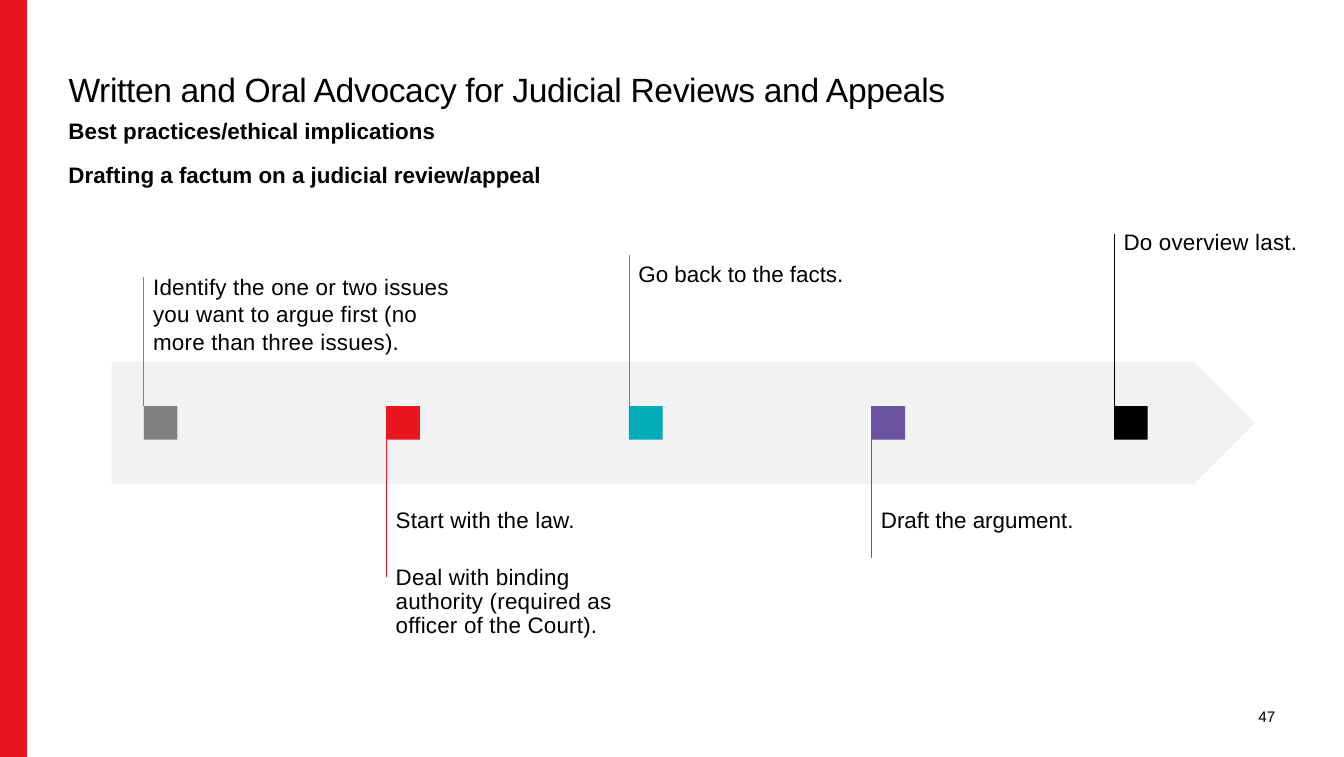
from lxml.etree import SubElement
from pptx import Presentation
from pptx.dml.color import RGBColor
from pptx.enum.shapes import MSO_CONNECTOR, MSO_SHAPE
from pptx.enum.text import MSO_ANCHOR, MSO_AUTO_SIZE, PP_ALIGN
from pptx.oxml.ns import qn
from pptx.util import Inches, Pt

BLACK = "000000"
RED = "E8171F"
MARKER_SIZE = 0.25
STEP_GAP = 1.805
LABEL_OFFSET = 0.06

STEPS = [
    ("808183", 2.06, (1.99, 2.26, 0.66), Pt(14.6), 0.1,
     ["Identify the one or two issues you want to argue first (no more than three issues)."]),
    (RED, 4.29, (3.75, 1.74, 1.01), 0.88, 0.1,
     ["Start with the law.",
      "Deal with binding authority (required as officer of the Court)."]),
    ("00ADB8", 1.9, (1.92, 1.69, 0.22), 0.89, 0, ["Go back to the facts."]),
    ("6954A2", 4.15, (3.75, 1.56, 0.22), 0.88, 0, ["Draft the argument."]),
    (BLACK, 1.74, (1.68, 1.45, 0.22), 0.89, 0.1, ["Do overview last."]),
]


def color(hex_value):
    """Turn a hex string into a colour."""
    return RGBColor.from_string(hex_value)


def inches(*lengths):
    """Convert several lengths to inches."""
    return [Inches(length) for length in lengths]


def write_text(shape, paragraphs, size=12, bold=False, spacing=0, line_spacing=None,
               align=PP_ALIGN.LEFT, anchor=MSO_ANCHOR.TOP, top_inset=0):
    """Fill a text shape with formatted paragraphs."""
    frame = shape.text_frame
    frame.word_wrap = True
    frame.auto_size = MSO_AUTO_SIZE.NONE
    frame.vertical_anchor = anchor
    frame.margin_left, frame.margin_top = inches(0.01, top_inset)
    frame.margin_right = frame.margin_bottom = 0
    for index, wording in enumerate(paragraphs):
        paragraph = frame.add_paragraph() if index else frame.paragraphs[0]
        paragraph.alignment = align
        paragraph.space_before = Pt(18 if index else 0)
        if line_spacing:
            paragraph.line_spacing = line_spacing
        run = paragraph.add_run()
        run.text = wording
        run.font.name = "Arial"
        run.font.size = Pt(size)
        run.font.bold = bold
        run.font.color.rgb = color(BLACK)
        if spacing:
            run._r.get_or_add_rPr().set("spc", str(round(spacing * 100)))


def add_text(slide, box, paragraphs, **style):
    """Add a text box with formatted paragraphs."""
    write_text(slide.shapes.add_textbox(*inches(*box)), paragraphs, **style)


def add_block(slide, preset, box, fill):
    """Add a borderless filled shape."""
    block = slide.shapes.add_shape(preset, *inches(*box))
    block.shadow.inherit = False
    block.fill.solid()
    block.fill.fore_color.rgb = color(fill)
    block.line.fill.background()


def add_leader(slide, x, start, end, stroke):
    """Add a thin vertical line between a marker and its label."""
    leader = slide.shapes.add_connector(
        MSO_CONNECTOR.STRAIGHT, *inches(x, start, x, end))
    leader.line.color.rgb = color(stroke)
    leader.line.width = Pt(0.5)
    SubElement(leader._element.spPr, qn("a:effectLst"))


def add_heading(slide, left, top, width):
    """Place the title and the two subheadings below it."""
    title = slide.shapes.title
    title.left, title.top, title.width, title.height = inches(left, top, width, 0.32)
    write_text(title, ["Written and Oral Advocacy for Judicial Reviews and Appeals"],
               size=18, spacing=-0.2, top_inset=0.01)
    subheadings = ["Best practices/ethical implications",
                   "Drafting a factum on a judicial review/appeal"]
    for index, subheading in enumerate(subheadings):
        add_text(slide, (left, top + 0.37 + index * 0.33, width, 0.23),
                 [subheading], bold=True)


def add_timeline(slide, left, top, width, height):
    """Draw the arrow band with its markers, leaders and labels."""
    add_block(slide, MSO_SHAPE.PENTAGON, (left, top, width, height), "F2F2F2")
    marker_top = top + (height - MARKER_SIZE) / 2
    for index, step in enumerate(STEPS):
        fill, leader_end, label_box, line_spacing, spacing, paragraphs = step
        label_top, label_width, label_height = label_box
        x = left + 0.24 + index * STEP_GAP
        add_block(slide, MSO_SHAPE.RECTANGLE,
                  (x, marker_top, MARKER_SIZE, MARKER_SIZE), fill)
        add_leader(slide, x, marker_top, leader_end, fill)
        add_text(slide, (x + LABEL_OFFSET, label_top, label_width, label_height),
                 paragraphs, spacing=spacing, line_spacing=line_spacing, top_inset=0.04)


def main():
    """Build and save the slide."""
    deck = Presentation()
    deck.slide_width, deck.slide_height = inches(10, 5.63)
    slide = deck.slides.add_slide(deck.slide_layouts[5])
    add_block(slide, MSO_SHAPE.RECTANGLE, (0, 0, 0.2, 5.63), RED)
    add_heading(slide, 0.5, 0.5, 9)
    add_timeline(slide, 0.83, 2.69, 8.51, 0.91)
    add_text(slide, (8.93, 5.03, 0.56, 0.6), ["47"], size=8.2,
             align=PP_ALIGN.RIGHT, anchor=MSO_ANCHOR.MIDDLE)
    deck.save("out.pptx")


if __name__ == "__main__":
    main()
